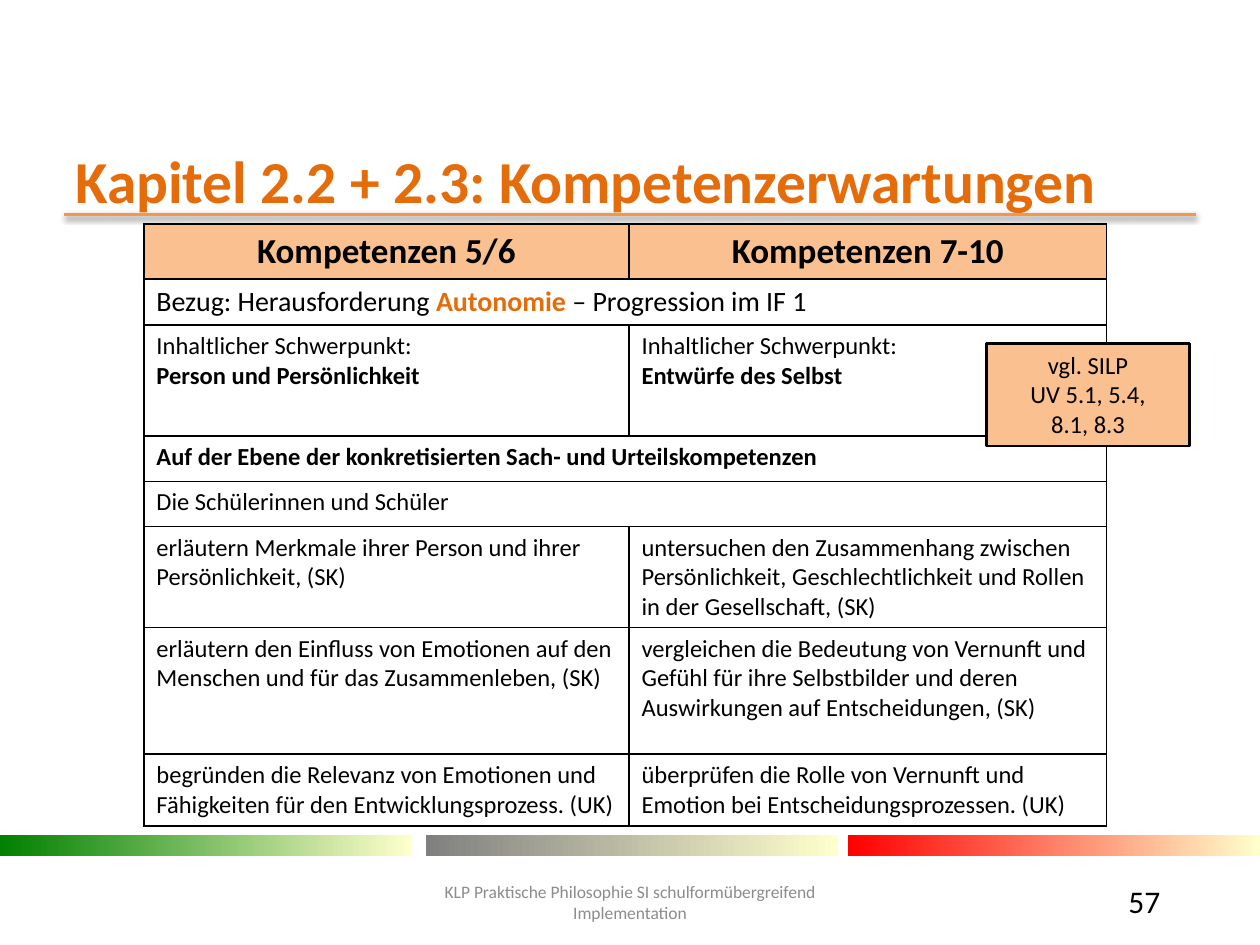
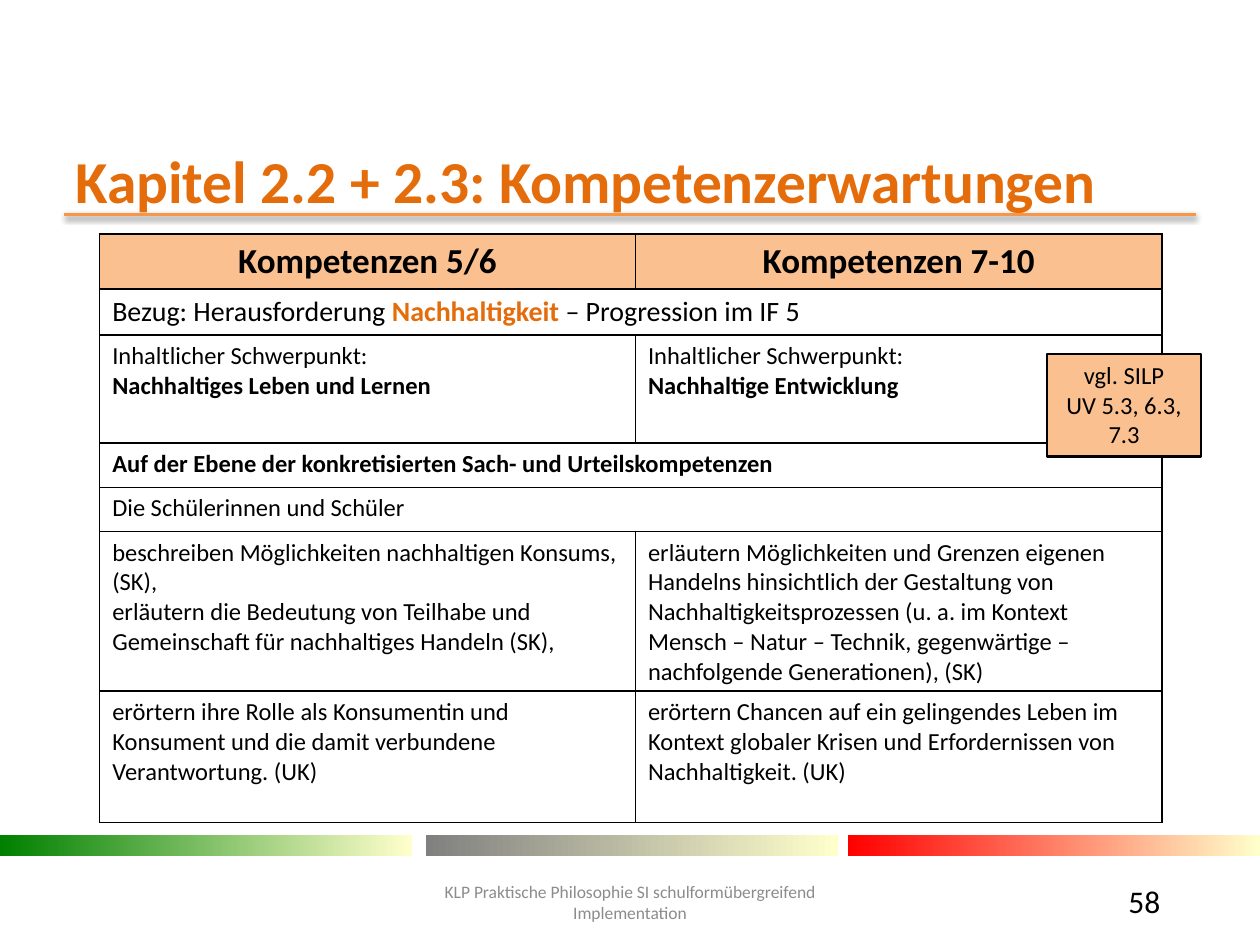
import pptx
import pptx.dml.color
import pptx.enum.shapes
import pptx.enum.text
import pptx.oxml
import pptx.oxml.ns
import pptx.util
from pptx.util import Cm, Pt

RGBColor = pptx.dml.color.RGBColor
BLACK = RGBColor(0x00, 0x00, 0x00)
ORANGE = RGBColor(0xE4, 0x6C, 0x0A)
RULE_ORANGE = RGBColor(0xF7, 0x96, 0x46)
PEACH = RGBColor(0xFA, 0xC0, 0x90)
FOOTER_GREY = RGBColor(0x8C, 0x8C, 0x8C)
GREEN = RGBColor(0x00, 0x80, 0x00)
GREY = RGBColor(0x80, 0x80, 0x80)
RED = RGBColor(0xFF, 0x00, 0x00)
CREAM = RGBColor(0xFF, 0xFF, 0xCC)

FONT = "Calibri"
LEFT = pptx.enum.text.PP_ALIGN.LEFT
CENTER = pptx.enum.text.PP_ALIGN.CENTER
TOP = pptx.enum.text.MSO_ANCHOR.TOP
MIDDLE = pptx.enum.text.MSO_ANCHOR.MIDDLE
RECTANGLE = pptx.enum.shapes.MSO_SHAPE.RECTANGLE
NAMESPACE = pptx.oxml.ns.nsdecls("a")

TITLE = "Kapitel 2.2 + 2.3: Kompetenzerwartungen"
FOOTER = "KLP Praktische Philosophie SI schulformübergreifend\nImplementation"
BANDS = [(0, GREEN), (8.59, GREY), (17.1, RED)]
HEADER = ["*Kompetenzen 5/6*", "*Kompetenzen 7-10*"]
LEVEL = ["*Auf der Ebene der konkretisierten Sach- und Urteilskompetenzen*"]
LEARNERS = ["Die Schülerinnen und Schüler"]
FOCUS = "Inhaltlicher Schwerpunkt:\n"

RULE_SHADOW = (
    f'<a:effectLst {NAMESPACE}><a:outerShdw blurRad="40000" dist="20000" dir="5400000" '
    'rotWithShape="0"><a:srgbClr val="000000"><a:alpha val="38000"/></a:srgbClr>'
    "</a:outerShdw></a:effectLst>"
)

# Each table row is a height in cm and its texts; a single text spans both columns
PAGES = [
    {
        "number": "57",
        "table": (2.9, 4.52),
        "columns": (9.78, 9.63),
        "rows": [
            (1.07, HEADER),
            (0.91, ["Bezug: Herausforderung *Autonomie* – Progression im IF 1"]),
            (2.24, [FOCUS + "*Person und Persönlichkeit*", FOCUS + "*Entwürfe des Selbst*"]),
            (0.91, LEVEL),
            (0.91, LEARNERS),
            (1.98, ["erläutern Merkmale ihrer Person und ihrer Persönlichkeit, (SK)",
                    "untersuchen den Zusammenhang zwischen Persönlichkeit, "
                    "Geschlechtlichkeit und Rollen in der Gesellschaft, (SK)"]),
            (2.55, ["erläutern den Einfluss von Emotionen auf den Menschen und für das "
                    "Zusammenleben, (SK)",
                    "vergleichen die Bedeutung von Vernunft und Gefühl für ihre "
                    "Selbstbilder und deren Auswirkungen auf Entscheidungen, (SK)"]),
            (1.45, ["begründen die Relevanz von Emotionen und Fähigkeiten für den "
                    "Entwicklungsprozess. (UK)",
                    "überprüfen die Rolle von Vernunft und Emotion bei "
                    "Entscheidungsprozessen. (UK)"]),
        ],
        "reference": ("vgl. SILP\nUV 5.1, 5.4,\n8.1, 8.3", 19.89, 6.93, 4.09),
    },
    {
        "number": "58",
        "table": (2.01, 4.72),
        "columns": (10.8, 10.62),
        "rows": [
            (1.07, HEADER),
            (0.89, ["Bezug: Herausforderung *Nachhaltigkeit* – Progression im IF 5"]),
            (2.18, [FOCUS + "*Nachhaltiges Leben und Lernen*",
                    FOCUS + "*Nachhaltige Entwicklung*"]),
            (0.89, LEVEL),
            (0.89, LEARNERS),
            (3.1, ["beschreiben Möglichkeiten nachhaltigen Konsums, (SK),\n"
                   "erläutern die Bedeutung von Teilhabe und Gemeinschaft für "
                   "nachhaltiges Handeln (SK),",
                   "erläutern Möglichkeiten und Grenzen eigenen Handelns hinsichtlich der "
                   "Gestaltung von Nachhaltigkeitsprozessen (u. a. im Kontext Mensch – Natur "
                   "– Technik, gegenwärtige – nachfolgende Generationen), (SK)"]),
            (2.65, ["erörtern ihre Rolle als Konsumentin und Konsument und die damit "
                    "verbundene Verantwortung. (UK)",
                    "erörtern Chancen auf ein gelingendes Leben im Kontext globaler Krisen "
                    "und Erfordernissen von Nachhaltigkeit. (UK)"]),
        ],
        "reference": ("vgl. SILP\nUV 5.3, 6.3, 7.3", 21.11, 7.14, 3.1),
    },
]


def write(frame, text, *, size=14, color=BLACK, strong_color=BLACK, align=LEFT, anchor=TOP):
    """Fill a text frame: one paragraph per line, *bold* between asterisks."""
    frame.word_wrap = True
    frame.vertical_anchor = anchor
    for index, line in enumerate(text.split("\n")):
        paragraph = frame.add_paragraph() if index else frame.paragraphs[0]
        paragraph.alignment = align
        for part, words in enumerate(line.split("*")):
            if words:
                strong = part % 2 == 1
                run = paragraph.add_run()
                run.text = words
                run.font.name = FONT
                run.font.size = Pt(size)
                run.font.bold = strong
                run.font.color.rgb = strong_color if strong else color


def add_borders(cell):
    """Draw a thin black line on all four sides of a cell."""
    for side in ("lnL", "lnR", "lnT", "lnB"):
        cell._tc.get_or_add_tcPr().append(pptx.oxml.parse_xml(
            f'<a:{side} {NAMESPACE} w="12700"><a:solidFill><a:srgbClr val="{BLACK}"/>'
            f"</a:solidFill></a:{side}>"))


deck = pptx.Presentation()
deck.slide_width = Cm(25.4)
deck.slide_height = Cm(19.05)

for page in PAGES:
    slide = deck.slides.add_slide(deck.slide_layouts[6])
    shapes = slide.shapes

    # Rule under the title
    rule = shapes.add_connector(pptx.enum.shapes.MSO_CONNECTOR.STRAIGHT,
                                Cm(1.3), Cm(4.32), Cm(24.1), Cm(4.32))
    rule.line.color.rgb = RULE_ORANGE
    rule.line.width = Pt(2)
    rule._element.spPr.append(pptx.oxml.parse_xml(RULE_SHADOW))

    # Three gradient bands
    for left, start in BANDS:
        band = shapes.add_shape(RECTANGLE, Cm(left), Cm(16.84), Cm(8.3), Cm(0.41))
        band.shadow.inherit = False
        band.line.fill.background()
        band.fill.gradient()
        band.fill.gradient_angle = 0
        for stop, color in zip(band.fill.gradient_stops, (start, CREAM)):
            stop.color.rgb = color

    # Title, footer and page number
    for text, left, top, width, height, look in [
        (f"*{TITLE}*", 1.27, 3.12, 22.86, 1,
         {"size": 34, "strong_color": ORANGE, "anchor": MIDDLE}),
        (FOOTER, 8.3, 17.63, 8.8, 1.12, {"size": 10, "color": FOOTER_GREY, "align": CENTER}),
        (page["number"], 22.5, 17.65, 1.63, 1.02, {"size": 18}),
    ]:
        box = shapes.add_textbox(Cm(left), Cm(top), Cm(width), Cm(height))
        write(box.text_frame, text, **look)

    # Table of competences
    rows, columns = page["rows"], page["columns"]
    left, top = page["table"]
    competences = shapes.add_table(len(rows), len(columns), Cm(left), Cm(top),
                                   Cm(sum(columns)), Cm(sum(row[0] for row in rows))).table
    competences.first_row = False
    competences.horz_banding = False
    for column, width in zip(competences.columns, columns):
        column.width = Cm(width)
    for row, (height, texts) in enumerate(rows):
        competences.rows[row].height = Cm(height)
        for column in range(len(columns)):
            cell = competences.cell(row, column)
            add_borders(cell)
            if row == 0:
                cell.fill.solid()
                cell.fill.fore_color.rgb = PEACH
            else:
                cell.fill.background()
        if len(texts) == 1:
            competences.cell(row, 0).merge(competences.cell(row, 1))
        for column, text in enumerate(texts):
            write(competences.cell(row, column).text_frame, text,
                  size={0: 20, 1: 16}.get(row, 14),
                  strong_color=ORANGE if row == 1 else BLACK,
                  align=CENTER if row == 0 else LEFT)

    # Reference to the school curriculum
    text, left, top, width = page["reference"]
    reference = shapes.add_shape(RECTANGLE, Cm(left), Cm(top), Cm(width), Cm(2.06))
    reference.shadow.inherit = False
    reference.fill.solid()
    reference.fill.fore_color.rgb = PEACH
    reference.line.color.rgb = BLACK
    reference.line.width = Pt(1.5)
    write(reference.text_frame, text, align=CENTER)

deck.save("out.pptx")
